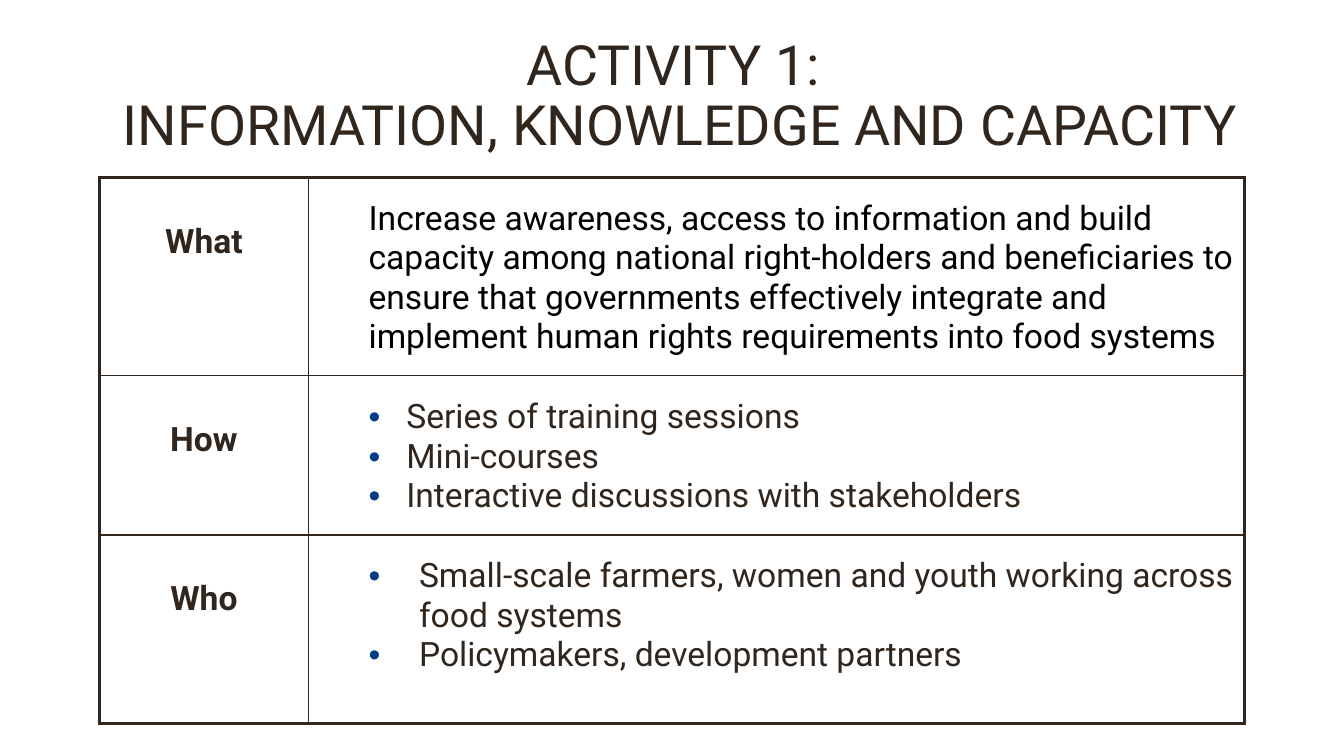
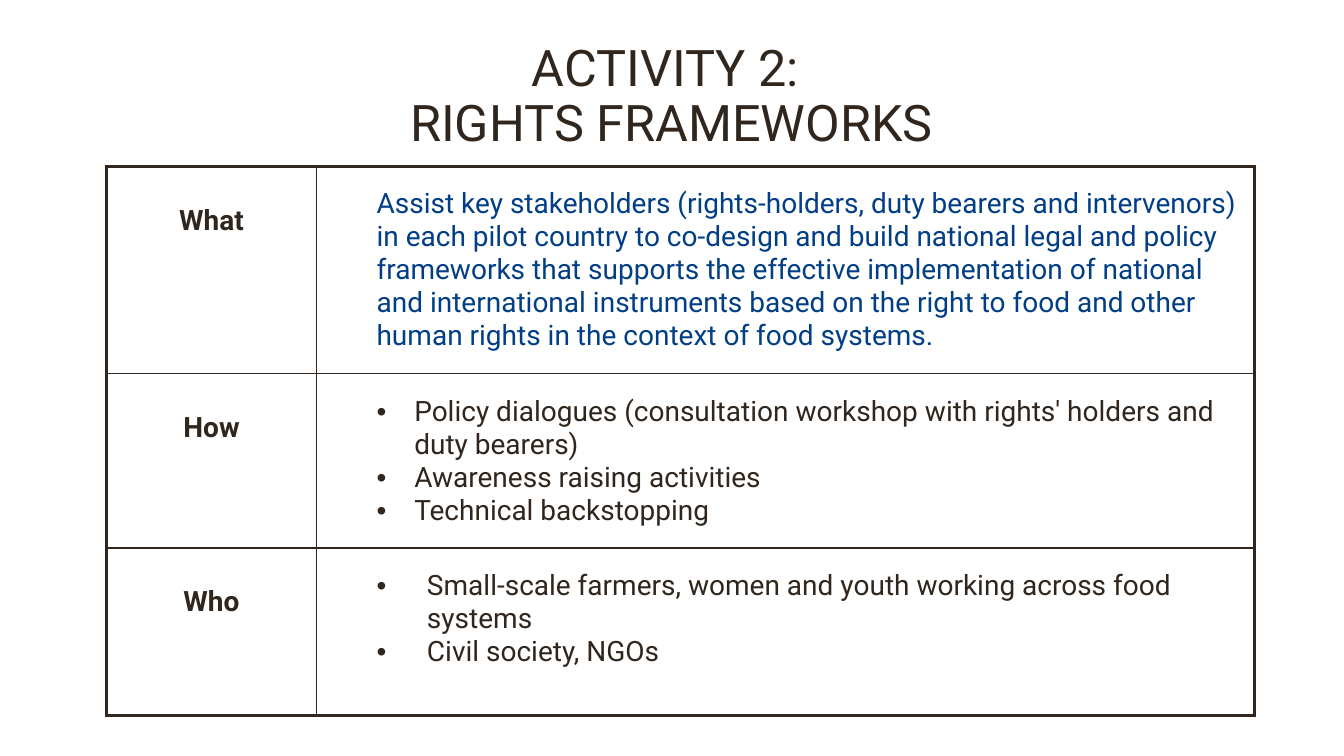
import pptx
import pptx.dml.color
import pptx.enum.text
import pptx.oxml
import pptx.oxml.ns
import pptx.util
from pptx.util import Cm

FONT = "Roboto"
BROWN = "30261D"
BLUE = "023E85"
BLACK = "000000"
WHITE = "FFFFFF"
OUTER_LINE = 2.25
INNER_LINE = 1
LINE_HEIGHT = 1.17
BODY_GAP = 10
CELL_PADDING = Cm(0.13)
TITLE_INSET = Cm(0.51)
PLAIN_INDENT = (1.27, 0)
HOW_INDENT = (2.22, 0.95)
WHO_INDENT = (2.54, 1.27)

ACTIVITIES = [
    {
        "title": ["ACTIVITY 1: ", "INFORMATION, KNOWLEDGE AND CAPACITY"],
        "title_size": 39.6,
        "title_box": (1.24, 0.81, 31.8, 3.3),
        "table_place": (2.51, 4.47),
        "columns": (5.26, 23.6),
        "rows": (5, 4.01, 4.75),
        "size": 24,
        "what_color": BLACK,
        "bullet_color": BLUE,
        "what": ["Increase awareness, access to information and build capacity among "
                 "national right-holders and beneficiaries to ensure that governments "
                 "effectively integrate and implement human rights requirements into "
                 "food systems"],
        "how": ["Series of training sessions", "Mini-courses",
                "Interactive discussions with stakeholders"],
        "who": ["Small-scale farmers, women and youth working across food systems",
                "Policymakers, development partners"],
    },
    {
        "title": ["ACTIVITY 2: ", "RIGHTS FRAMEWORKS"],
        "title_size": 36,
        "title_box": (2.69, 0.76, 28.47, 3.4),
        "table_place": (2.69, 4.19),
        "columns": (5.28, 23.65),
        "rows": (5.23, 4.39, 4.22),
        "size": 20,
        "what_color": BLUE,
        "bullet_color": BROWN,
        "what": ["Assist key stakeholders (rights-holders, duty bearers and intervenors) "
                 "in each pilot country to co-design and build national legal and policy "
                 "frameworks that supports the effective implementation of national and "
                 "international instruments based on the right to food and other human "
                 "rights in the context of food systems."],
        "how": ["Policy dialogues (consultation workshop with rights' holders and duty bearers)",
                "Awareness raising activities", "Technical backstopping"],
        "who": ["Small-scale farmers, women and youth working across food systems",
                "Civil society, NGOs"],
    },
]


def rgb(color):
    return pptx.dml.color.RGBColor.from_string(color)


def add_run(paragraph, text, size, color=BROWN, bold=False):
    run = paragraph.add_run()
    run.text = text
    run.font.name = FONT
    run.font.size = pptx.util.Pt(size)
    run.font.bold = bold
    run.font.color.rgb = rgb(color)


def add_element(parent, tag, **attributes):
    element = pptx.oxml.parse_xml(f"<{tag} {pptx.oxml.ns.nsdecls('a')}/>")
    for name, value in attributes.items():
        element.set(name, str(value))
    parent.append(element)
    return element


def indent(paragraph, left, hanging, bullet_color=None):
    properties = paragraph._p.get_or_add_pPr()
    properties.set("marL", str(Cm(left)))
    properties.set("indent", str(-Cm(hanging)))
    if bullet_color:
        add_element(add_element(properties, "a:buClr"), "a:srgbClr", val=bullet_color)
        add_element(properties, "a:buFont", typeface="Arial")
        add_element(properties, "a:buChar", char="•")


def set_borders(cell, widths):
    properties = cell._tc.get_or_add_tcPr()
    for side in ("L", "R", "T", "B"):
        line = add_element(properties, f"a:ln{side}", w=pptx.util.Pt(widths[side]))
        add_element(add_element(line, "a:solidFill"), "a:srgbClr", val=BROWN)
    cell.fill.background()


def add_title(slide, box, lines, size):
    title = slide.shapes.title
    title.left, title.top, title.width, title.height = map(Cm, box)
    title.fill.solid()
    title.fill.fore_color.rgb = rgb(WHITE)
    frame = title.text_frame
    frame.word_wrap = True
    frame.auto_size = pptx.enum.text.MSO_AUTO_SIZE.NONE
    frame.vertical_anchor = pptx.enum.text.MSO_ANCHOR.MIDDLE
    frame.margin_left = frame.margin_right = TITLE_INSET
    frame.margin_top = frame.margin_bottom = TITLE_INSET
    paragraph = frame.paragraphs[0]
    paragraph.alignment = pptx.enum.text.PP_ALIGN.CENTER
    paragraph.line_spacing = 0.9
    for index, line in enumerate(lines):
        if index:
            paragraph.add_line_break()
        add_run(paragraph, line, size)


def prepare_cell(cell, gap):
    cell.margin_left = cell.margin_right = Cm(0.25)
    cell.margin_top = CELL_PADDING + pptx.util.Pt(gap * LINE_HEIGHT)
    cell.margin_bottom = CELL_PADDING
    cell.vertical_anchor = pptx.enum.text.MSO_ANCHOR.TOP


def fill_label(cell, text, size):
    prepare_cell(cell, size)
    paragraph = cell.text_frame.paragraphs[0]
    paragraph.alignment = pptx.enum.text.PP_ALIGN.CENTER
    add_run(paragraph, text, size, bold=True)


def fill_body(cell, texts, size, color, indents, bullet_color):
    prepare_cell(cell, BODY_GAP)
    frame = cell.text_frame
    for index, text in enumerate(texts):
        paragraph = frame.add_paragraph() if index else frame.paragraphs[0]
        indent(paragraph, *indents, bullet_color)
        add_run(paragraph, text, size, color)


def add_activity_table(slide, activity):
    columns, rows, size = activity["columns"], activity["rows"], activity["size"]
    left, top = activity["table_place"]
    table = slide.shapes.add_table(
        len(rows), len(columns), Cm(left), Cm(top), Cm(sum(columns)), Cm(sum(rows))).table
    table.first_row = table.horz_banding = False
    for column, width in zip(table.columns, columns):
        column.width = Cm(width)
    for row, height in zip(table.rows, rows):
        row.height = Cm(height)

    bullet_color = activity["bullet_color"]
    entries = [
        ("What", activity["what"], activity["what_color"], PLAIN_INDENT, None),
        ("How", activity["how"], BROWN, HOW_INDENT, bullet_color),
        ("Who", activity["who"], BROWN, WHO_INDENT, bullet_color),
    ]
    for row, (label, texts, color, indents, bullet) in enumerate(entries):
        fill_label(table.cell(row, 0), label, size)
        fill_body(table.cell(row, 1), texts, size, color, indents, bullet)
        for column in range(len(columns)):
            edges = {"L": column == 0, "R": column == len(columns) - 1,
                     "T": row == 0, "B": row == len(rows) - 1}
            set_borders(table.cell(row, column), {
                side: OUTER_LINE if outer else INNER_LINE for side, outer in edges.items()})


def add_activity_slide(presentation, activity):
    slide = presentation.slides.add_slide(presentation.slide_layouts[5])
    add_title(slide, activity["title_box"], activity["title"], activity["title_size"])
    add_activity_table(slide, activity)


def main():
    presentation = pptx.Presentation()
    presentation.slide_width = Cm(33.87)
    presentation.slide_height = Cm(19.05)
    for activity in ACTIVITIES:
        add_activity_slide(presentation, activity)
    presentation.save("out.pptx")


if __name__ == "__main__":
    main()
